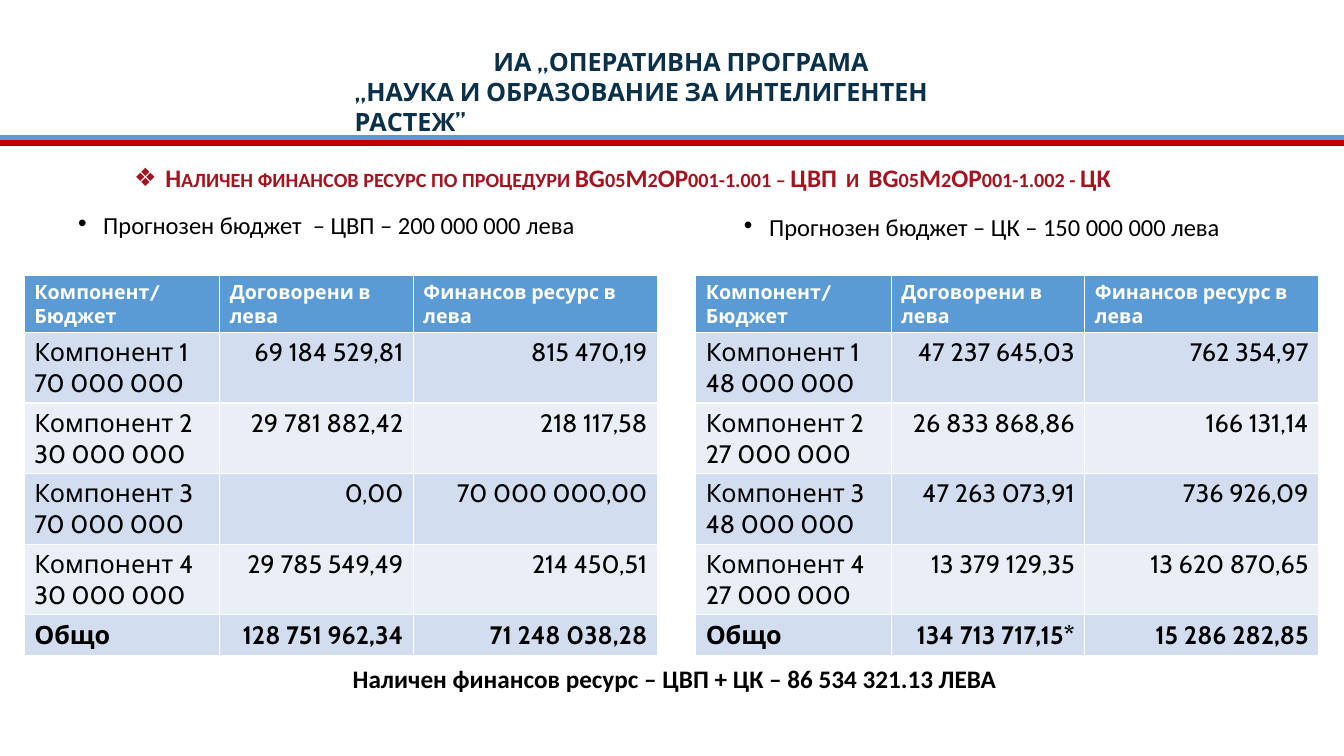
from lxml.etree import SubElement
from pptx import Presentation
from pptx.dml.color import RGBColor
from pptx.enum.shapes import MSO_CONNECTOR as Link
from pptx.enum.text import MSO_ANCHOR as Anchor, PP_ALIGN as Align
from pptx.oxml.ns import qn
from pptx.util import Inches, Pt

WIDE, TALL = 13.33, 7.5
BLUE, RED, NAVY, WINE = "5B9BD5", "C00000", "0A304A", "A51321"
WHITE, BLACK = "FFFFFF", "000000"
BANDS = ["EAEFF7", "D2DEEF"]
HEAD = ["Компонент/ Бюджет", "Договорени в лева", "Финансов ресурс в лева"]
CVP = [
    ["Компонент 1\n70 000 000", "69 184 529,81", "815 470,19"],
    ["Компонент 2\n30 000 000", "29 781 882,42", "218 117,58"],
    ["Компонент 3\n70 000 000", "0,00", "70 000 000,00"],
    ["Компонент 4\n30 000 000", "29 785 549,49", "214 450,51"],
    ["Общо", "128 751 962,34", "71 248 038,28"],
]
CK = [
    ["Компонент 1\n48 000 000", "47 237 645,03", "762 354,97"],
    ["Компонент 2\n27 000 000", "26 833 868,86", "166 131,14"],
    ["Компонент 3\n48 000 000", "47 263 073,91", "736 926,09"],
    ["Компонент 4\n27 000 000", "13 379 129,35", "13 620 870,65"],
    ["Общо", "134 713 717,15*", "15 286 282,85"],
]


def paint(color):
    return RGBColor.from_string(color)


def style(font, color, **form):
    font.color.rgb = paint(color)
    for key, value in form.items():
        setattr(font, key, value)


def write(frame, text, color, align=Align.LEFT, **form):
    """Fill a frame, one paragraph for each line of text."""
    frame.text = text
    for par in frame.paragraphs:
        par.alignment = align
        for run in par.runs:
            style(run.font, color, **form)
    return frame.paragraphs


def bullet(par, mark, indent):
    props = par._p.get_or_add_pPr()
    props.set("marL", str(Inches(indent)))
    props.set("indent", str(-Inches(indent)))
    SubElement(props, qn("a:buFont")).set("typeface", "Arial")
    SubElement(props, qn("a:buChar")).set("char", mark)


def add_box(slide, box, wrap=True):
    frame = slide.shapes.add_textbox(*map(Inches, box)).text_frame
    frame.word_wrap = wrap
    return frame


def add_rule(slide, y, color):
    rule = slide.shapes.add_connector(
        Link.STRAIGHT, 0, Inches(y), Inches(WIDE), Inches(y))
    rule.line.color.rgb = paint(color)
    rule.line.width = Pt(3.75)
    SubElement(rule._element.spPr, qn("a:effectLst"))


def add_banner(slide, box):
    """Agency name above a double rule."""
    left, top, width, height = box
    add_rule(slide, top + 0.96, BLUE)
    add_rule(slide, top + 1.01, RED)
    pars = write(add_box(slide, box),
                 "ИА „ОПЕРАТИВНА ПРОГРАМА\n"
                 "„НАУКА И ОБРАЗОВАНИЕ ЗА ИНТЕЛИГЕНТЕН РАСТЕЖ”",
                 NAVY, size=Pt(18), name="Cabin", bold=True)
    pars[0].alignment = Align.CENTER


def add_title(slide, box):
    title = slide.shapes.title
    for key, value in zip(["left", "top", "width", "height"], box):
        setattr(title, key, Inches(value))
    frame = title.text_frame
    frame.vertical_anchor = Anchor.MIDDLE
    par = write(frame, "Наличен финансов ресурс по процедури "
                "BG05M2OP001-1.001 – ЦВП  и  BG05M2OP001-1.002 - ЦК",
                WINE, size=Pt(18), name="Calibri", bold=True)[0]
    bullet(par, "❖", 0.31)
    par.line_spacing = 0.9
    par.runs[0]._r.get_or_add_rPr().set("cap", "small")


def add_budget(slide, box, text, align, inset):
    """Forecast line above a table."""
    frame = add_box(slide, box)
    frame.margin_left = frame.margin_right = Inches(inset)
    par = write(frame, text, BLACK, align, size=Pt(17.5), name="Calibri")[0]
    bullet(par, "•", 0.25)
    par.line_spacing = 0.7


def add_grid(slide, left, top, widths, rows):
    """Funds by component, with a header and a total row."""
    data = [HEAD] + rows
    size = [left, top, sum(widths), 0.41 * len(data)]
    grid = slide.shapes.add_table(
        len(data), len(HEAD), *map(Inches, size)).table
    for col, width in zip(grid.columns, widths):
        col.width = Inches(width)
    for r, row in enumerate(data):
        for c, text in enumerate(row):
            cell = grid.cell(r, c)
            cell.fill.solid()
            cell.fill.fore_color.rgb = paint(BANDS[r % 2] if r else BLUE)
            write(cell.text_frame, text, BLACK if r else WHITE,
                  Align.RIGHT if r and c else Align.LEFT,
                  size=Pt(18 if r else 14), name="Cabin",
                  bold=r in (0, len(rows)))


def add_total(slide, box):
    write(add_box(slide, box, False),
          "Наличен финансов ресурс – ЦВП + ЦК – 86 534 321.13 ЛЕВА",
          BLACK, size=Pt(18), name="Calibri", bold=True)


def main():
    deck = Presentation()
    deck.slide_width, deck.slide_height = Inches(WIDE), Inches(TALL)
    slide = deck.slides.add_slide(deck.slide_layouts.get_by_name("Title Only"))
    add_banner(slide, (3.42, 0.41, 6.67, 0.71))
    add_title(slide, (1.23, 1.56, 11, 0.44))
    add_budget(slide, (0.54, 2.11, 5.4, 0.33),
               "Прогнозен бюджет  – ЦВП – 200 000 000 лева", Align.CENTER, 0)
    add_budget(slide, (7.28, 2.13, 5.4, 0.36),
               "Прогнозен бюджет – ЦК – 150 000 000 лева", Align.LEFT, 0.1)
    add_grid(slide, 0.24, 2.73, [1.94, 1.92, 2.42], CVP)
    add_grid(slide, 6.9, 2.73, [1.94, 1.92, 2.32], CK)
    add_total(slide, (3.4, 6.53, 6.6, 0.4))
    deck.save("out.pptx")


if __name__ == "__main__":
    main()
